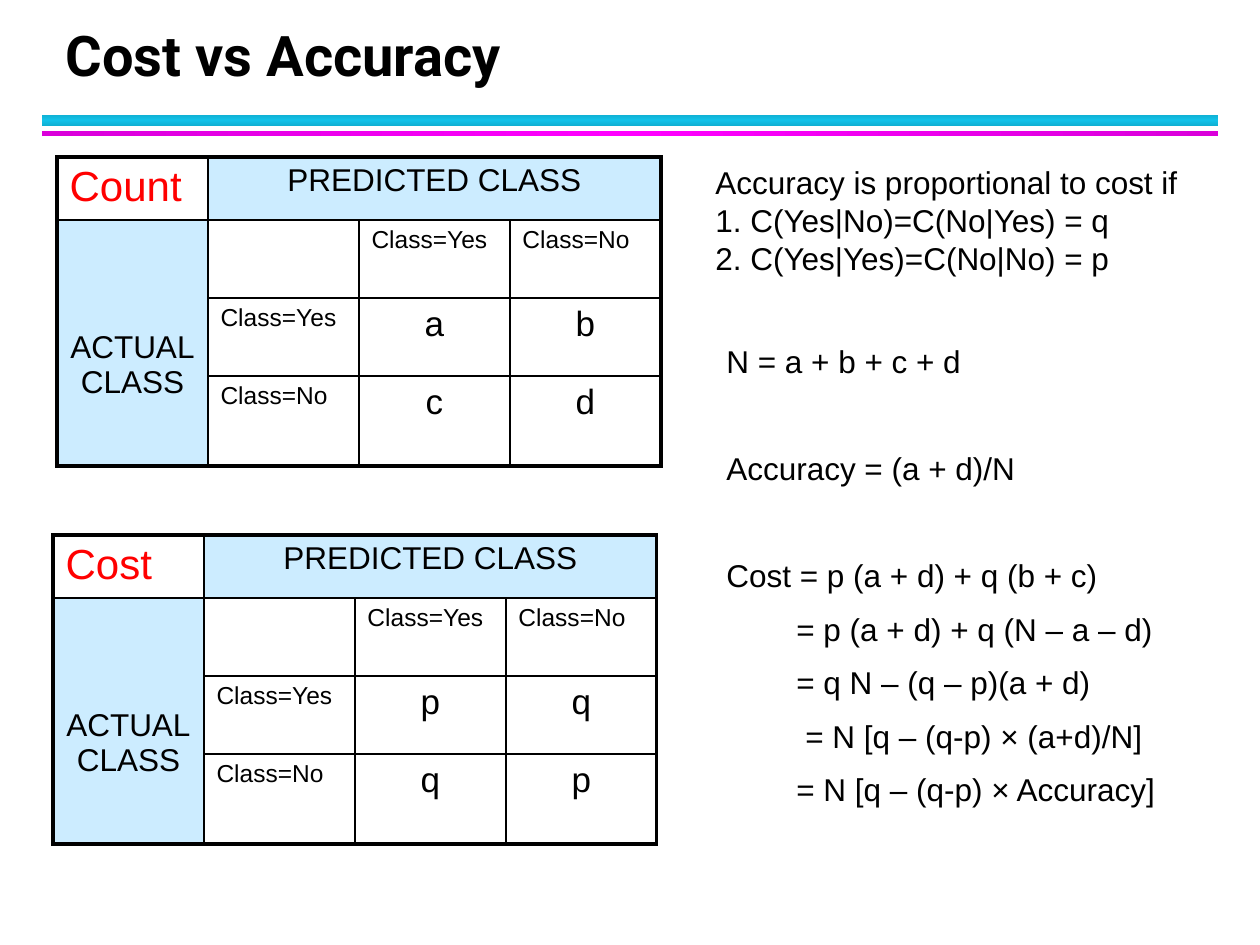
from copy import deepcopy
from dataclasses import dataclass, field
from typing import Any

from lxml import etree
from pptx import Presentation
from pptx import util as u
from pptx.dml.color import RGBColor
from pptx.enum import shapes, text
from pptx.oxml.ns import qn

EMU_PER_PX = 914400 / 126


def px(length: float) -> int:
    return round(length * EMU_PER_PX)


@dataclass(frozen=True)
class Theme:
    ink: str = "000000"
    label: str = "FF0000"
    header_fill: str = "CCECFF"
    cyan: tuple[str, ...] = ("10B0D3", "12C2E9", "10B0D3")
    magenta: tuple[str, ...] = ("DA00DA", "FF00FF", "DA00DA")
    title_font: str = "Roboto"
    body_font: str = "Arial"
    title: int = 32
    corner: int = 24
    value: int = 20
    body: int = 18
    class_name: int = 14
    outer_line: float = 2.25
    inner_line: float = 1


THEME = Theme()
LEFT, CENTER = text.PP_ALIGN.LEFT, text.PP_ALIGN.CENTER


@dataclass(frozen=True)
class Box:
    left: int
    top: int
    width: int
    height: int

    def emu(self) -> tuple[int, ...]:
        return tuple(px(n) for n in (self.left, self.top, self.width, self.height))


@dataclass(frozen=True)
class Line:
    words: str
    indent: int = 0
    size: int = THEME.body
    color: str = THEME.ink
    font: str = THEME.body_font
    bold: bool = False
    layout: dict[str, Any] = field(default_factory=dict)


@dataclass(frozen=True)
class Matrix:
    left: int
    top: int
    name: str
    values: tuple[str, str, str, str]


@dataclass(frozen=True)
class Rule:
    box: Box
    colors: tuple[str, ...]
    angle: int


def apply(target: Any, values: dict[str, Any]) -> None:
    for name, value in values.items():
        setattr(target, name, value)


def write_line(paragraph: Any, line: Line) -> None:
    paragraph.text = line.words
    apply(paragraph, line.layout)
    apply(paragraph.font, {"size": u.Pt(line.size), "name": line.font, "bold": line.bold})
    for run in paragraph.runs:
        apply(run.font, {"size": u.Pt(line.size), "name": line.font, "bold": line.bold})
        run.font.color.rgb = RGBColor.from_string(line.color)
    if line.indent:
        paragraph._p.get_or_add_pPr().set("marL", str(px(line.indent)))


def add_text(slide: Any, box: Box, lines: list[Line], anchor: Any = text.MSO_ANCHOR.TOP) -> None:
    frame = slide.shapes.add_textbox(*box.emu()).text_frame
    apply(frame, {"word_wrap": True, "vertical_anchor": anchor})
    for number, line in enumerate(lines):
        write_line(frame.add_paragraph() if number else frame.paragraphs[0], line)


def add_rule(slide: Any, rule: Rule) -> None:
    bar = slide.shapes.add_shape(shapes.MSO_SHAPE.RECTANGLE, *rule.box.emu())
    bar.shadow.inherit = False
    bar.line.fill.background()
    bar.fill.gradient()
    bar.fill.gradient_angle = rule.angle
    stop_list = bar._element.spPr.find(".//" + qn("a:gsLst"))
    stop_list.append(deepcopy(stop_list[-1]))
    for number, (stop, color) in enumerate(zip(bar.fill.gradient_stops, rule.colors)):
        stop.position = number / (len(rule.colors) - 1)
        stop.color.rgb = RGBColor.from_string(color)


def add_borders(cell: Any, outer: dict[str, bool]) -> None:
    properties = cell._tc.get_or_add_tcPr()
    for side, is_outer in outer.items():
        width = THEME.outer_line if is_outer else THEME.inner_line
        border = etree.SubElement(properties, qn(f"a:ln{side}"), w=str(u.Pt(width)))
        fill = etree.SubElement(border, qn("a:solidFill"))
        etree.SubElement(fill, qn("a:srgbClr"), val=THEME.ink)


def add_matrix(slide: Any, matrix: Matrix) -> None:
    row_heights = (62, 78, 78, 90)
    column_width, count = 151, 4
    box = Box(matrix.left, matrix.top, count * column_width, sum(row_heights))
    table = slide.shapes.add_table(len(row_heights), count, *box.emu()).table
    apply(table, {"first_row": False, "horz_banding": False})
    for column in table.columns:
        column.width = px(column_width)
    for row, height in zip(table.rows, row_heights):
        row.height = px(height)

    # Headings span the columns and rows of the inner grid
    table.cell(0, 1).merge(table.cell(0, 3))
    table.cell(1, 0).merge(table.cell(3, 0))
    centered = {"alignment": CENTER}
    words = {
        (0, 0): Line(matrix.name, size=THEME.corner, color=THEME.label),
        (0, 1): Line("PREDICTED CLASS", layout=centered),
        (1, 0): Line("ACTUAL\vCLASS", layout=centered),
    }
    for number, name in enumerate(("Class=Yes", "Class=No"), start=2):
        words[1, number] = words[number, 1] = Line(name, size=THEME.class_name)
    for number, value in enumerate(matrix.values):
        words[2 + number // 2, 2 + number % 2] = Line(value, size=THEME.value, layout=centered)

    # Borders, fills and words
    for row in range(len(row_heights)):
        for column in range(count):
            cell = table.cell(row, column)
            add_borders(cell, {
                "L": column == 0,
                "R": column + cell.span_width == count,
                "T": row == 0,
                "B": row + cell.span_height == len(row_heights),
            })
            if (row == 0) != (column == 0):
                cell.fill.solid()
                cell.fill.fore_color.rgb = RGBColor.from_string(THEME.header_fill)
            else:
                cell.fill.background()
            if (row, column) in words:
                write_line(cell.text_frame.paragraphs[0], words[row, column])
    table.cell(1, 0).margin_top = px(110)


RULES = [
    Rule(Box(42, 115, 1176, 11), THEME.cyan, 90),
    Rule(Box(42, 131, 1176, 5), THEME.magenta, 0),
]
MATRICES = [
    Matrix(57, 157, "Count", ("a", "b", "c", "d")),
    Matrix(53, 535, "Cost", ("p", "q", "q", "p")),
]
CONDITIONS = [
    Line("Accuracy is proportional to cost if"),
    Line("1. C(Yes|No)=C(No|Yes) = q"),
    Line("2. C(Yes|Yes)=C(No|No) = p"),
]
STEP = {"space_before": u.Pt(9)}
NEW_FORMULA = {"space_before": u.Pt(39.5)}
DERIVATION = [
    Line("N = a + b + c + d"),
    Line("Accuracy = (a + d)/N", layout=NEW_FORMULA),
    Line("Cost = p (a + d) + q (b + c)", layout=NEW_FORMULA),
    Line("= p (a + d) + q (N – a – d)", indent=70, layout=STEP),
    Line("= q N – (q – p)(a + d)", indent=70, layout=STEP),
    Line("= N [q – (q-p) × (a+d)/N]", indent=79, layout=STEP),
    Line("= N [q – (q-p) × Accuracy]", indent=70, layout=STEP),
]


def main() -> None:
    deck = Presentation()
    apply(deck, {"slide_width": px(1260), "slide_height": px(945)})
    slide = deck.slides.add_slide(deck.slide_layouts[6])

    # Title and the rules below it
    for rule in RULES:
        add_rule(slide, rule)
    title = Line("Cost vs Accuracy", size=THEME.title, font=THEME.title_font, bold=True,
                 layout={"line_spacing": u.Pt(36)})
    add_text(slide, Box(53, 21, 1142, 73), [title], text.MSO_ANCHOR.BOTTOM)

    # Matrices on the left, derivation on the right
    for matrix in MATRICES:
        add_matrix(slide, matrix)
    add_text(slide, Box(714, 336, 494, 562), DERIVATION)
    add_text(slide, Box(703, 157, 514, 126), CONDITIONS)
    deck.save("out.pptx")


if __name__ == "__main__":
    main()
